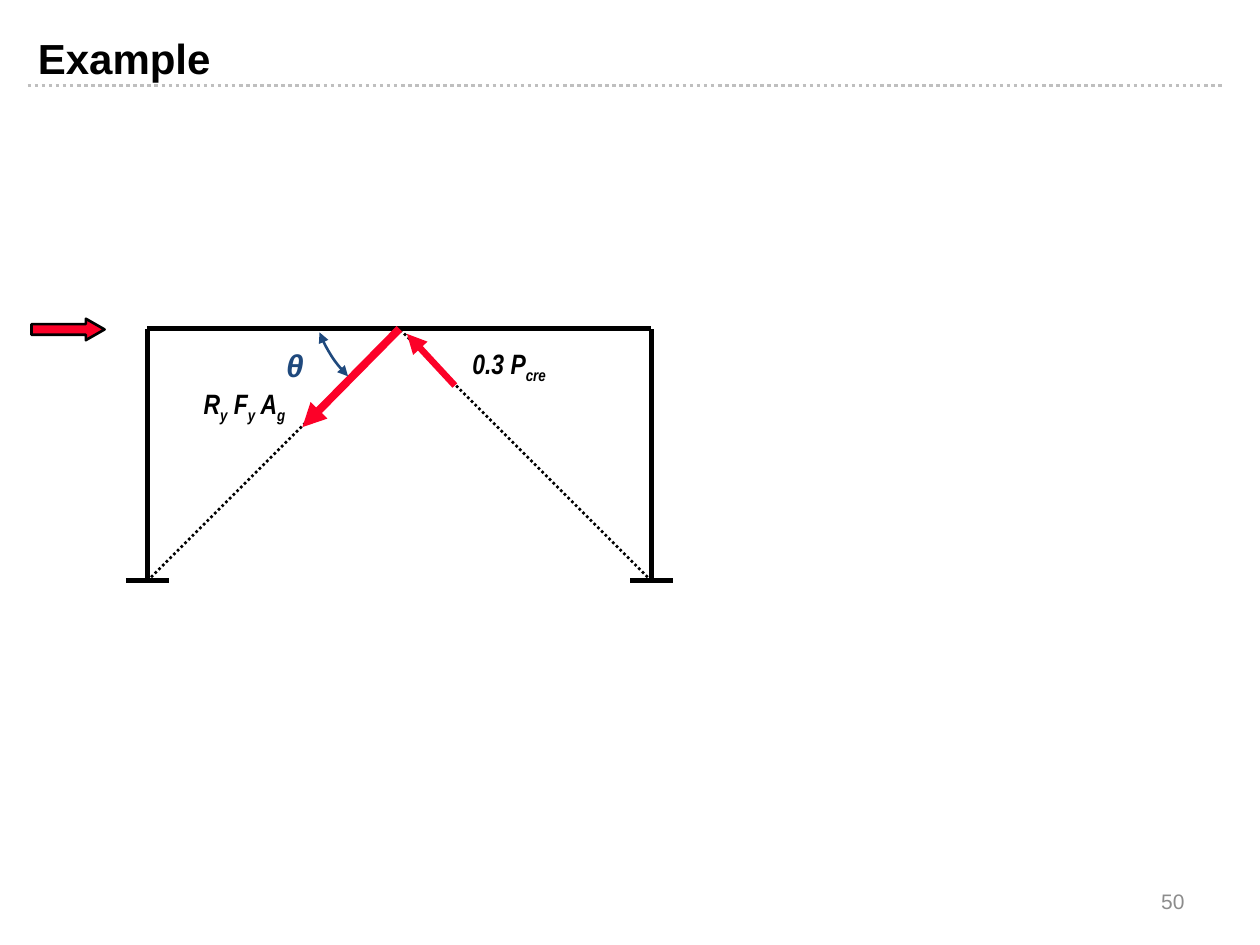
from dataclasses import dataclass

import pptx
import pptx.dml.color
import pptx.enum.dml
import pptx.enum.shapes
import pptx.enum.text
import pptx.oxml
import pptx.oxml.ns
import pptx.util
from pptx.util import Inches

SHAPE = pptx.enum.shapes.MSO_SHAPE
ALIGN = pptx.enum.text.PP_ALIGN
ANCHOR = pptx.enum.text.MSO_ANCHOR
DOTTED = pptx.enum.dml.MSO_LINE.ROUND_DOT


@dataclass(frozen=True)
class Theme:
    black: str = "000000"
    force: str = "FC0128"
    angle: str = "1F497D"
    rule: str = "BFBFBF"
    muted: str = "8C8C8C"
    font: str = "Arial"
    narrow: str = "Arial Narrow"
    title: int = 24
    label: int = 16
    symbol: int = 18
    number: int = 12


THEME = Theme()


def rgb(color):
    return pptx.dml.color.RGBColor.from_string(color)


def set_line(line, color, width, dash=None, heads=()):
    line.color.rgb = rgb(color)
    line.width = pptx.util.Pt(width)
    if dash:
        line.dash_style = dash
    properties = line._get_or_add_ln()
    for head in heads:
        end = pptx.oxml.parse_xml(
            f'<a:{head} {pptx.oxml.ns.nsdecls("a")} type="triangle"/>')
        properties.append(end)


def add_line(page, start, end, color, width, dash=None, heads=()):
    line = page.shapes.add_connector(
        pptx.enum.shapes.MSO_CONNECTOR.STRAIGHT,
        *map(Inches, (*start, *end)))
    set_line(line.line, color, width, dash, heads)
    line._element.spPr.append(
        pptx.oxml.parse_xml(f'<a:effectLst {pptx.oxml.ns.nsdecls("a")}/>'))


def set_font(para, name, size, color, bold=False, italic=False):
    font = para.font
    font.name = name
    font.size = pptx.util.Pt(size)
    font.color.rgb = rgb(color)
    font.bold = bold
    font.italic = italic


def add_label(page, box, parts, name, size, color):
    label = page.shapes.add_textbox(*map(Inches, box))
    label.text_frame.word_wrap = True
    para = label.text_frame.paragraphs[0]
    para.alignment = ALIGN.CENTER
    set_font(para, name, size, color, bold=True, italic=True)
    for index, part in enumerate(parts):
        span = para.add_run()
        span.text = part
        if index % 2:
            span.font._element.set("baseline", "-25000")


def add_header(page, box):
    left, top, width, height = box
    title = page.shapes.title
    title.left, title.top, title.width, title.height = map(Inches, box)
    frame = title.text_frame
    frame.text = "Example"
    frame.auto_size = pptx.enum.text.MSO_AUTO_SIZE.NONE
    frame.vertical_anchor = ANCHOR.TOP
    frame.margin_top = Inches(0.1)
    para = frame.paragraphs[0]
    para.alignment = ALIGN.LEFT
    set_font(para, THEME.font, THEME.title, THEME.black, bold=True)
    rule = top + height + 0.08
    add_line(page, (left + 0.02, rule), (left + 9.52, rule),
             THEME.rule, 2, DOTTED)


def add_frame(page, box):
    left, top, width, height = box
    right, base, middle = left + width, top + height, left + width / 2
    for column in (left, right):
        add_line(page, (column, base), (column, top), THEME.black, 3)
        add_line(page, (column - 0.17, base), (column + 0.17, base),
                 THEME.black, 3)
        add_line(page, (column, base), (middle, top), THEME.black, 1.5, DOTTED)
    for start in (left, middle):
        add_line(page, (start, top), (start + width / 2, top), THEME.black, 3)


def add_forces(page, box):
    left, top, width, height = box
    middle = left + width / 2
    load = page.shapes.add_shape(
        SHAPE.RIGHT_ARROW,
        *map(Inches, (left - 0.92, top - 0.08, 0.58, 0.17)))
    load.shadow.inherit = False
    load.adjustments[0] = 0.5
    load.adjustments[1] = 0.875
    load.fill.solid()
    load.fill.fore_color.rgb = rgb(THEME.force)
    set_line(load.line, THEME.black, 1.5)

    add_line(page, (middle, top), (middle - 0.77, top + 0.78),
             THEME.force, 4.5, heads=["tailEnd"])
    add_line(page, (middle + 0.06, top + 0.04), (middle + 0.44, top + 0.45),
             THEME.force, 3.75, heads=["headEnd"])
    add_label(page, (left + 0.31, top + 0.41, 0.92, 0.37),
              ["R", "y", " F", "y", " A", "g"],
              THEME.narrow, THEME.label, THEME.black)
    add_label(page, (middle + 0.41, top + 0.09, 0.92, 0.37),
              ["0.3 P", "cre"], THEME.narrow, THEME.label, THEME.black)


def add_angle(page, box):
    left, top, width, height = box
    radius = 1
    center_x, center_y = left + width / 2 + 0.3, top - 0.33
    arc = page.shapes.add_shape(
        SHAPE.ARC, *map(Inches, (center_x - radius, center_y - radius,
                                 2 * radius, 2 * radius)))
    arc.shadow.inherit = False
    arc.fill.background()
    for index, degrees in enumerate((135, 159)):
        arc.adjustments[index] = degrees * 0.6
    set_line(arc.line, THEME.angle, 1.5, heads=["headEnd", "tailEnd"])
    add_label(page, (left + 0.71, top + 0.09, 0.92, 0.4), ["θ"],
              THEME.font, THEME.symbol, THEME.angle)


def add_page_number(page, box):
    number = page.shapes.add_textbox(*map(Inches, box))
    frame = number.text_frame
    frame.word_wrap = True
    frame.vertical_anchor = ANCHOR.MIDDLE
    frame.text = "50"
    para = frame.paragraphs[0]
    para.alignment = ALIGN.RIGHT
    set_font(para, THEME.font, THEME.number, THEME.muted)


def main():
    deck = pptx.Presentation()
    deck.slide_width, deck.slide_height = Inches(10), Inches(7.5)
    page = deck.slides.add_slide(deck.slide_layouts.get_by_name("Title Only"))
    braced_frame = (1.17, 2.61, 4, 2)
    add_header(page, (0.2, 0.16, 8.98, 0.44))
    add_frame(page, braced_frame)
    add_forces(page, braced_frame)
    add_angle(page, braced_frame)
    add_page_number(page, (7.17, 6.95, 2.33, 0.4))
    deck.save("out.pptx")


if __name__ == "__main__":
    main()
